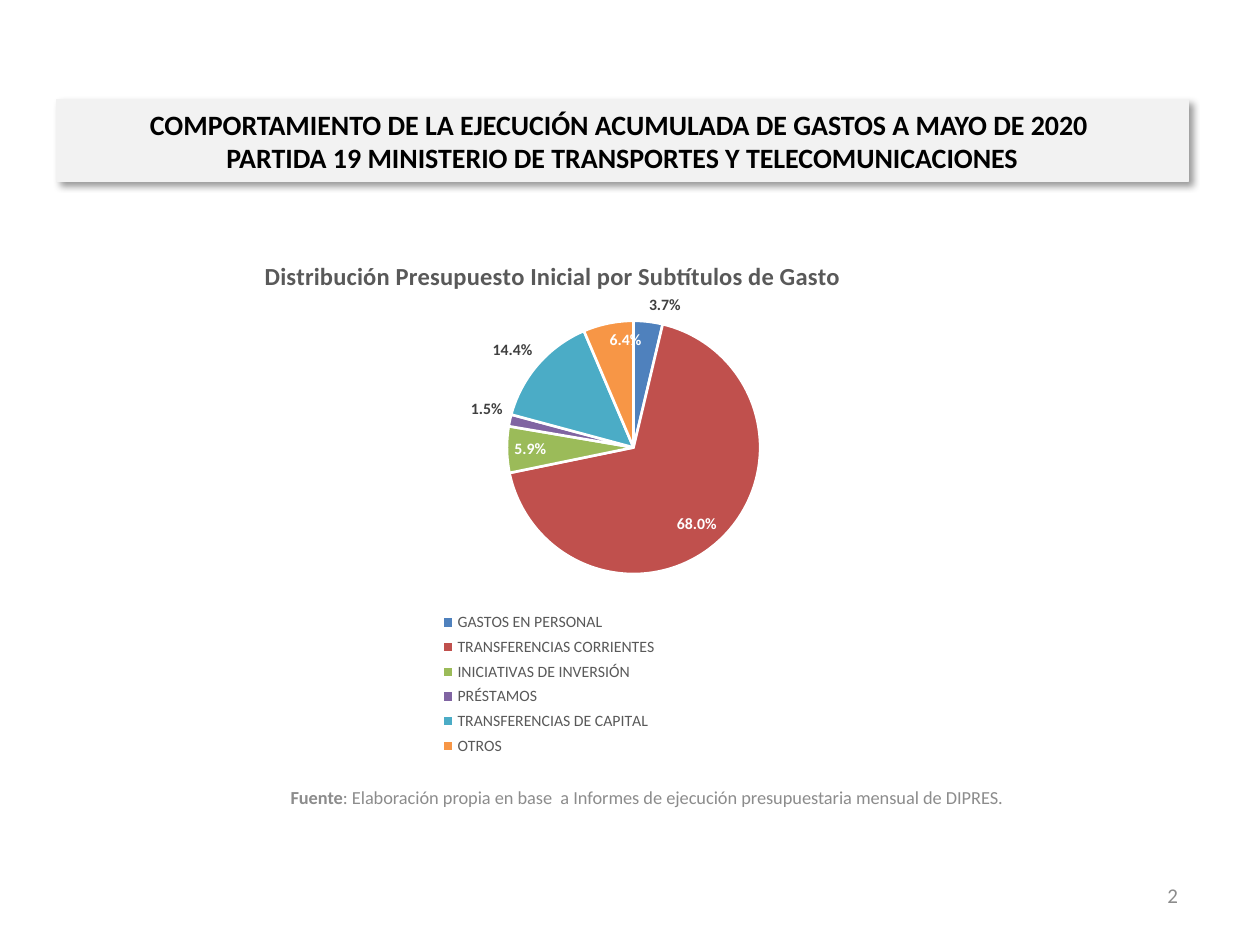
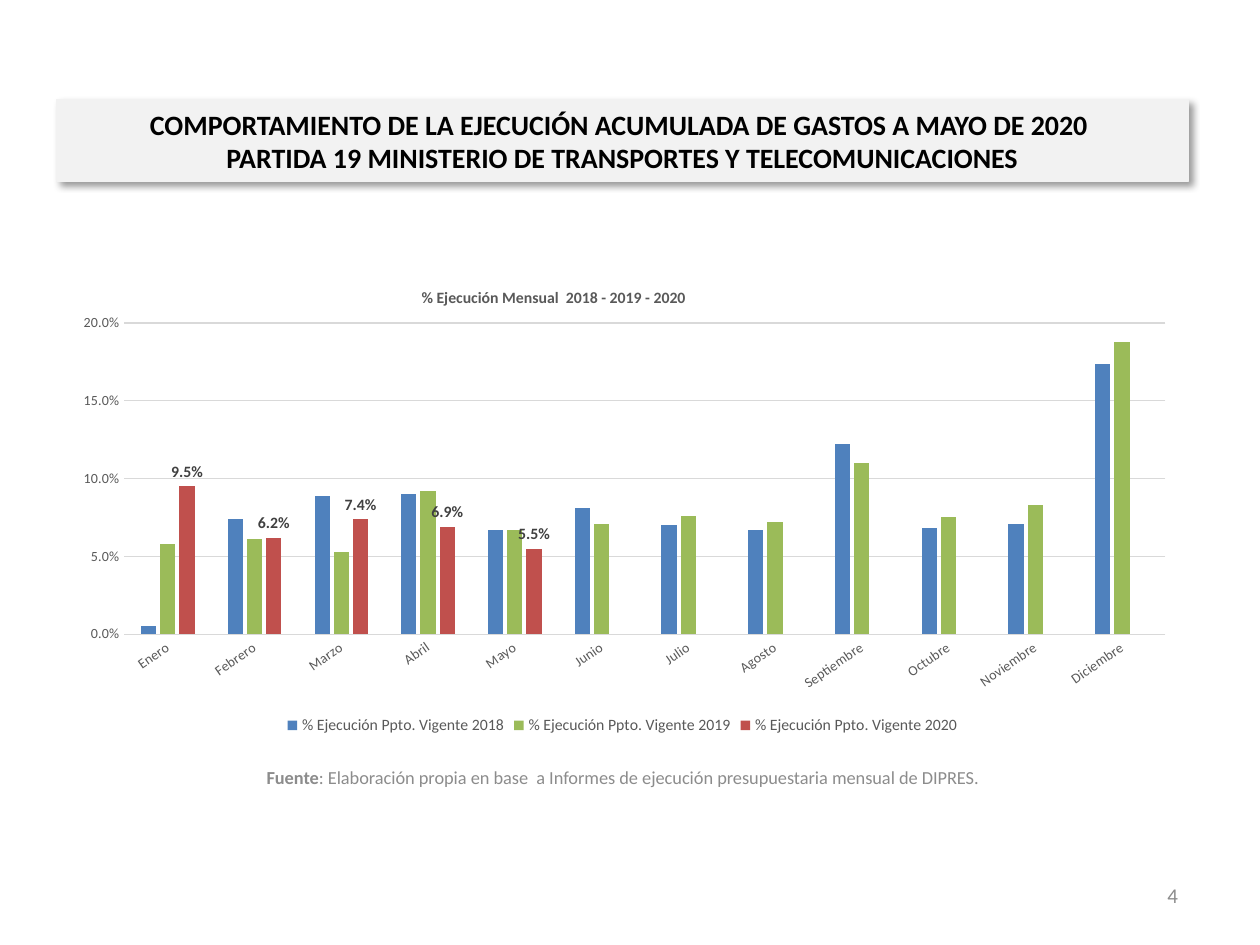
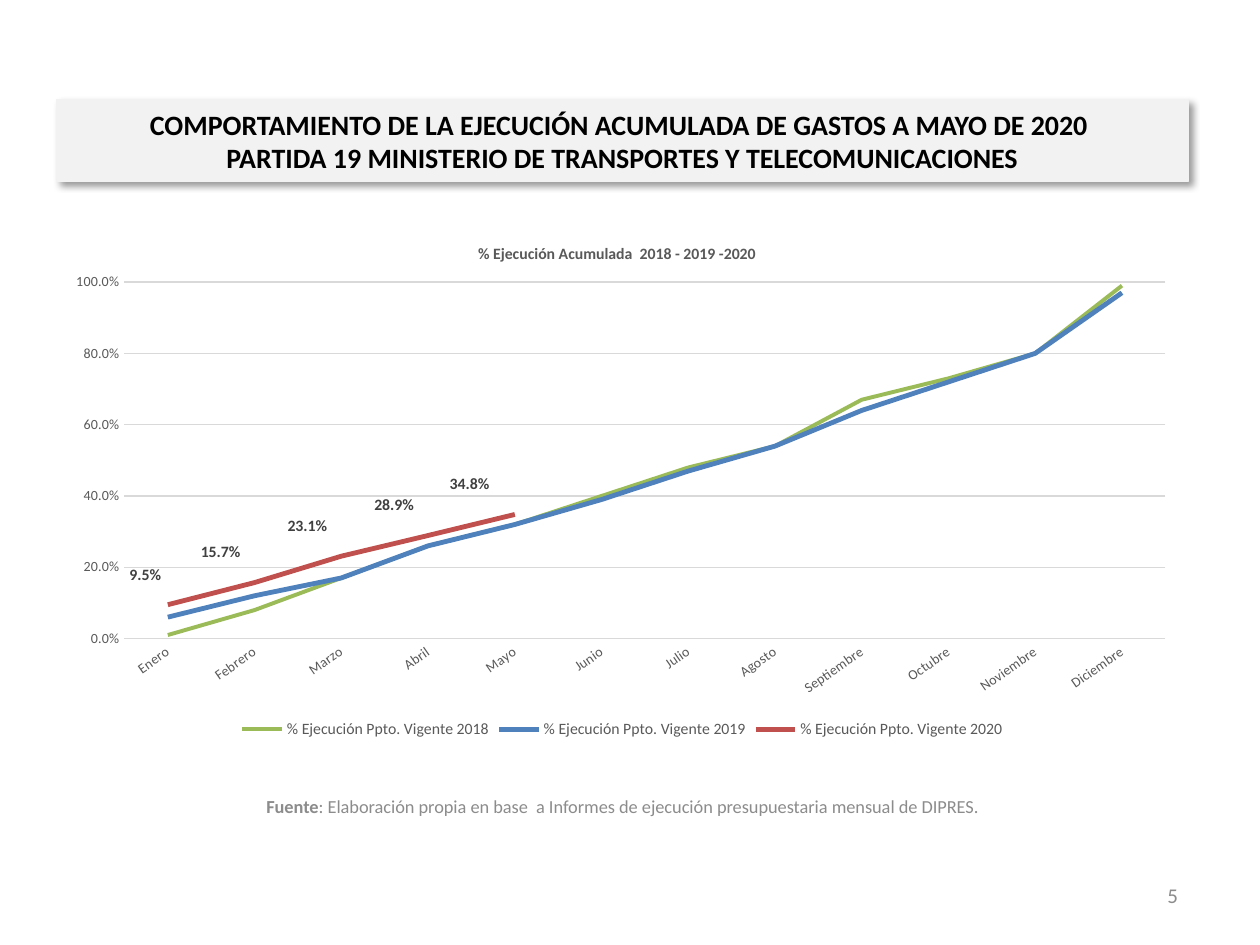
from dataclasses import dataclass

from pptx import Presentation
from pptx.chart.data import CategoryChartData
from pptx.dml.color import RGBColor
from pptx.enum.chart import (XL_CHART_TYPE, XL_LABEL_POSITION,
                             XL_LEGEND_POSITION, XL_TICK_MARK)
from pptx.enum.text import MSO_ANCHOR, MSO_AUTO_SIZE, PP_ALIGN
from pptx.oxml import parse_xml
from pptx.oxml.ns import nsdecls, qn
from pptx.util import Cm, Pt


@dataclass(frozen=True)
class Theme:
    font: str = "Calibri"
    black: str = "000000"
    white: str = "FFFFFF"
    band: str = "F2F2F2"
    muted: str = "8C8C8C"
    chart_text: str = "595959"
    label_text: str = "404040"
    grid: str = "D9D9D9"
    blue: str = "4F81BD"
    red: str = "C0504D"
    green: str = "9BBB59"
    purple: str = "8064A2"
    teal: str = "4BACC6"
    orange: str = "F79646"
    title_size: float = 16
    number_size: float = 12
    source_size: float = 10.5
    chart_size: float = 10
    label_size: float = 9
    axis_size: float = 8


THEME = Theme()
LEFT, WIDTH = 1.14, 22.81  # shared by the title band and the charts, in cm

HEADING = ("COMPORTAMIENTO DE LA EJECUCIÓN ACUMULADA DE GASTOS A MAYO DE 2020 \v"
           "PARTIDA 19 MINISTERIO DE TRANSPORTES Y TELECOMUNICACIONES")
SOURCE = ("Fuente", ": Elaboración propia en base  a Informes de ejecución "
                    "presupuestaria mensual de DIPRES.")
MONTHS = ["Enero", "Febrero", "Marzo", "Abril", "Mayo", "Junio", "Julio",
          "Agosto", "Septiembre", "Octubre", "Noviembre", "Diciembre"]
YEARS = [f"% Ejecución Ppto. Vigente {year}" for year in (2018, 2019, 2020)]

# Expense item, share, colour, whether its label sits inside the slice
EXPENSES = [
    ("GASTOS EN PERSONAL", 3.7, THEME.blue, False),
    ("TRANSFERENCIAS CORRIENTES", 68, THEME.red, True),
    ("INICIATIVAS DE INVERSIÓN", 5.9, THEME.green, True),
    ("PRÉSTAMOS", 1.5, THEME.purple, False),
    ("TRANSFERENCIAS DE CAPITAL", 14.4, THEME.teal, False),
    ("OTROS", 6.4, THEME.orange, True),
]
MONTHLY = [
    [0.005, 0.074, 0.089, 0.09, 0.067, 0.081, 0.07, 0.067, 0.122, 0.068, 0.071, 0.174],
    [0.058, 0.061, 0.053, 0.092, 0.067, 0.071, 0.076, 0.072, 0.11, 0.075, 0.083, 0.188],
    [0.095, 0.062, 0.074, 0.069, 0.055],
]
CUMULATIVE = [
    [0.01, 0.08, 0.17, 0.26, 0.32, 0.4, 0.48, 0.54, 0.67, 0.73, 0.8, 0.99],
    [0.06, 0.12, 0.17, 0.26, 0.32, 0.39, 0.47, 0.54, 0.64, 0.72, 0.8, 0.97],
    [0.095, 0.157, 0.231, 0.289, 0.348],
]


def rgb(color):
    return RGBColor.from_string(color)


def place(parent, after, edge=True, **fractions):
    """Give a chart part a manual layout, as fractions of the chart."""
    for old in parent.findall(qn("c:layout")):
        parent.remove(old)
    inner = '<c:layoutTarget val="inner"/>' if after is None else ""
    modes = '<c:xMode val="edge"/><c:yMode val="edge"/>' if edge else ""
    sizes = "".join(f'<c:{key} val="{value}"/>' for key, value in fractions.items())
    layout = parse_xml(f'<c:layout {nsdecls("c")}><c:manualLayout>'
                       f"{inner}{modes}{sizes}</c:manualLayout></c:layout>")
    if after is None:
        parent.insert(0, layout)
    else:
        parent.find(qn(after)).addnext(layout)


class Report:
    def __init__(self, theme):
        self.theme = theme
        self.deck = Presentation()
        self.deck.slide_width, self.deck.slide_height = Cm(25.4), Cm(19.05)
        self.slide = None

    def style(self, font, size, color, bold=False):
        font.name, font.size, font.bold = self.theme.font, Pt(size), bold
        font.color.rgb = rgb(color)

    def add_slide(self, number):
        self.slide = self.deck.slides.add_slide(self.deck.slide_layouts[5])
        self.title_band()
        self.text(18.08, 17.53, 5.92, 1.02, [number], PP_ALIGN.RIGHT,
                  self.theme.number_size)

    def title_band(self):
        band = self.slide.shapes.title
        band.left, band.top, band.width, band.height = map(Cm, (LEFT, 2.01, WIDTH, 1.65))
        band.fill.solid()
        band.fill.fore_color.rgb = rgb(self.theme.band)
        band.line.color.rgb = rgb(self.theme.band)
        band.line.width = Pt(0.75)
        band.shadow.inherit = False
        band._element.spPr.find(qn("a:effectLst")).append(parse_xml(
            f'<a:outerShdw {nsdecls("a")} blurRad="{Pt(4)}" dist="{Pt(3)}" '
            'dir="2700000" algn="tl" rotWithShape="0">'
            f'<a:srgbClr val="{self.theme.black}"><a:alpha val="40000"/></a:srgbClr>'
            "</a:outerShdw>"))
        frame = band.text_frame
        frame.text = HEADING
        frame.word_wrap, frame.auto_size = True, MSO_AUTO_SIZE.NONE
        frame.vertical_anchor = MSO_ANCHOR.MIDDLE
        heading = frame.paragraphs[0]
        heading.alignment = PP_ALIGN.CENTER
        for run in heading.runs:
            self.style(run.font, self.theme.title_size, self.theme.black, True)

    def text(self, left, top, width, height, parts, align, size):
        """Add a muted line; with several parts, the first one is bold."""
        box = self.slide.shapes.add_textbox(Cm(left), Cm(top), Cm(width), Cm(height))
        frame = box.text_frame
        frame.word_wrap, frame.vertical_anchor = True, MSO_ANCHOR.MIDDLE
        line = frame.paragraphs[0]
        line.alignment = align
        for index, part in enumerate(parts):
            run = line.add_run()
            run.text = part
            self.style(run.font, size, self.theme.muted, len(parts) > 1 and index == 0)

    def source(self, left, top, width, height):
        self.text(left, top, width, height, SOURCE, PP_ALIGN.CENTER,
                  self.theme.source_size)

    def chart(self, kind, top, height, categories, series, number_format,
              title, title_size, title_at, plot_at):
        data = CategoryChartData(number_format=number_format)
        data.categories = categories
        for name, values in series:
            data.add_series(name, values + [None] * (len(categories) - len(values)))
        chart = self.slide.shapes.add_chart(
            kind, Cm(LEFT), Cm(top), Cm(WIDTH), Cm(height), data).chart
        self.style(chart.font, self.theme.chart_size, self.theme.black)
        # Title
        chart.has_title = True
        frame = chart.chart_title.text_frame
        frame.text = title
        self.style(frame.paragraphs[0].runs[0].font, title_size,
                   self.theme.chart_text, True)
        place(chart._chartSpace.xpath("c:chart/c:title")[0], "c:tx", **title_at)
        # Legend
        chart.has_legend = True
        chart.legend.position = XL_LEGEND_POSITION.BOTTOM
        chart.legend.include_in_layout = False
        self.style(chart.legend.font, self.theme.label_size, self.theme.chart_text)
        # Plot
        place(chart._chartSpace.xpath("c:chart/c:plotArea")[0], None, **plot_at)
        return chart

    def axes(self, chart, maximum, step):
        months, rate = chart.category_axis, chart.value_axis
        for axis in (months, rate):
            axis.major_tick_mark = axis.minor_tick_mark = XL_TICK_MARK.NONE
            self.style(axis.tick_labels.font, self.theme.axis_size, self.theme.chart_text)
        rate.minimum_scale, rate.maximum_scale, rate.major_unit = 0, maximum, step
        rate.tick_labels.number_format = "0.0%"
        rate.tick_labels.number_format_is_linked = False
        rate.format.line.fill.background()
        for line in (months.format.line, rate.major_gridlines.format.line):
            line.color.rgb = rgb(self.theme.grid)
            line.width = Pt(0.75)
        months_text = chart._chartSpace.xpath(".//c:catAx/c:txPr/a:bodyPr")[0]
        months_text.set("rot", "-2100000")

    def point_label(self, point, position, color):
        label = point.data_label
        self.style(label.font, self.theme.label_size, color, True)
        label.position = position

    def hide_leader_lines(self, chart):
        for leader in chart._chartSpace.xpath(".//c:showLeaderLines"):
            leader.set("val", "0")

    def expense_pie(self):
        names, shares, colors, insides = zip(*EXPENSES)
        chart = self.chart(
            XL_CHART_TYPE.PIE, 4.47, 11.1, names, [("Series 1", list(shares))],
            '0.0"%"', "Distribución Presupuesto Inicial por Subtítulos de Gasto", 14,
            dict(x=0.18, y=0.06), dict(x=0.02, y=0.18, w=0.98, h=0.46))
        place(chart._chartSpace.xpath("c:chart/c:legend")[0], "c:legendPos",
              x=0.31, y=0.7, w=0.25, h=0.28)
        chart.plots[0].vary_by_categories = True
        slices = chart.plots[0].series[0].points
        for index, (color, inside) in enumerate(zip(colors, insides)):
            piece = slices[index]
            piece.format.fill.solid()
            piece.format.fill.fore_color.rgb = rgb(color)
            piece.format.line.color.rgb = rgb(self.theme.white)
            piece.format.line.width = Pt(1.5)
            if inside:
                self.point_label(piece, XL_LABEL_POSITION.INSIDE_END, self.theme.white)
            else:
                self.point_label(piece, XL_LABEL_POSITION.OUTSIDE_END,
                                 self.theme.label_text)
        self.hide_leader_lines(chart)

    def monthly_columns(self):
        chart = self.chart(
            XL_CHART_TYPE.COLUMN_CLUSTERED, 5.26, 9.65, MONTHS, zip(YEARS, MONTHLY),
            "0.0%", "% Ejecución Mensual  2018 - 2019 - 2020", self.theme.label_size,
            dict(x=0.32, y=0.05), dict(x=0.06, y=0.13, w=0.92, h=0.65))
        self.axes(chart, 0.2, 0.05)
        plot = chart.plots[0]
        plot.vary_by_categories = False
        plot.gap_width, plot.overlap = 219, -27
        colors = (self.theme.blue, self.theme.green, self.theme.red)
        for year, color in zip(plot.series, colors):
            year.format.fill.solid()
            year.format.fill.fore_color.rgb = rgb(color)
        labels = plot.series[2].data_labels
        labels.show_value = True
        labels.number_format, labels.number_format_is_linked = "0.0%", False
        labels.position = XL_LABEL_POSITION.OUTSIDE_END
        self.style(labels.font, self.theme.label_size, self.theme.label_text, True)

    def cumulative_lines(self):
        chart = self.chart(
            XL_CHART_TYPE.LINE, 4.42, 10.57, MONTHS, zip(YEARS, CUMULATIVE),
            "0.0%", "% Ejecución Acumulada  2018 - 2019 -2020", self.theme.label_size,
            dict(x=0.37, y=0.04), dict(x=0.06, y=0.12, w=0.92, h=0.68))
        self.axes(chart, 1, 0.2)
        plot = chart.plots[0]
        plot.vary_by_categories = False
        looks = ((self.theme.green, 2.25), (self.theme.blue, 2.75), (self.theme.red, 2.75))
        for year, (color, weight) in zip(plot.series, looks):
            year.smooth = False
            year.format.line.color.rgb = rgb(color)
            year.format.line.width = Pt(weight)
        # Labels of 2020 stand above and to the left of their points
        for index in range(len(CUMULATIVE[2])):
            self.point_label(plot.series[2].points[index], XL_LABEL_POSITION.ABOVE,
                             self.theme.label_text)
        shifts = (-0.02, -0.03, -0.03, -0.03, -0.04)
        for label, shift in zip(chart._chartSpace.xpath(".//c:dLbl"), shifts):
            place(label, "c:idx", edge=False, x=shift, y=-0.03)
        self.hide_leader_lines(chart)


def main():
    report = Report(THEME)

    # Initial budget by type of expense
    report.add_slide("2")
    report.expense_pie()
    report.source(2.11, 15.57, 21.87, 1.02)

    # Monthly execution
    report.add_slide("4")
    report.monthly_columns()
    report.source(2.26, 15.27, 20.6, 0.81)

    # Cumulative execution
    report.add_slide("5")
    report.cumulative_lines()
    report.source(2.46, 15.75, 20.19, 1.02)

    report.deck.save("out.pptx")


if __name__ == "__main__":
    main()
